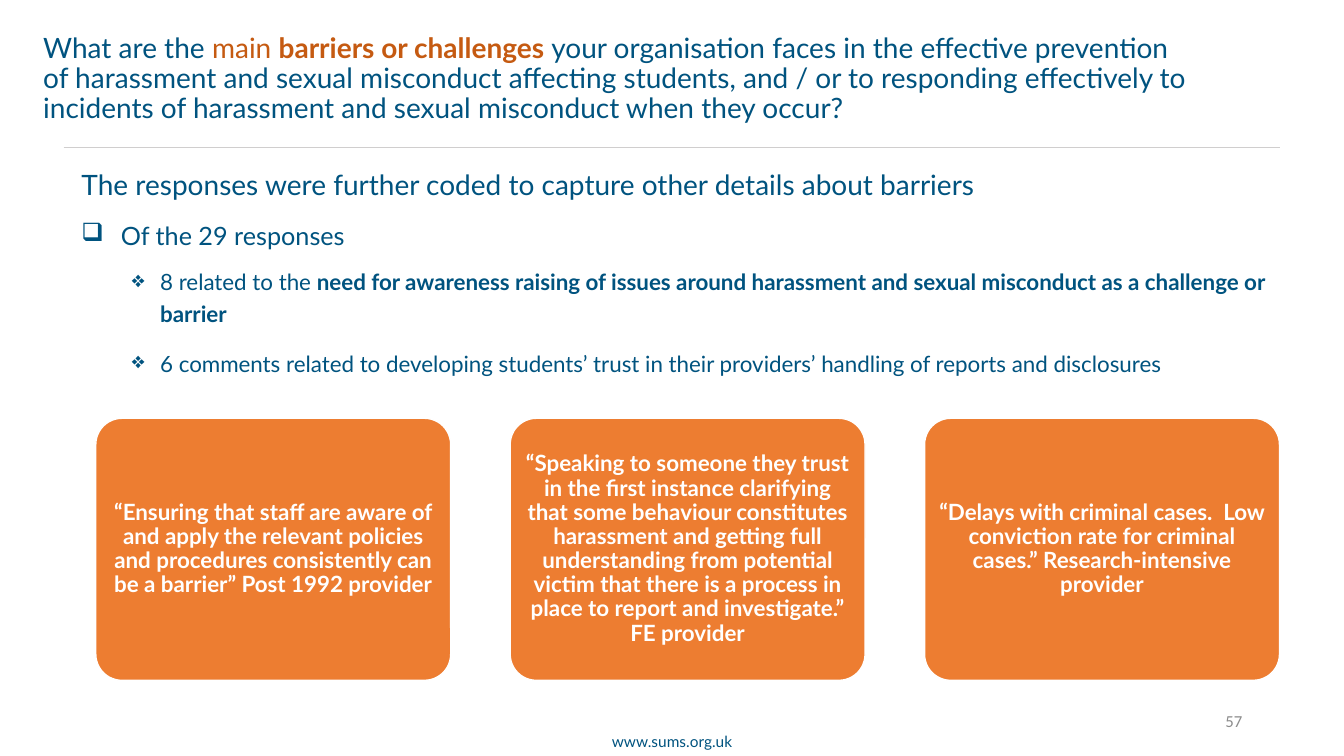
from lxml import etree
from pptx import Presentation
from pptx.dml.color import RGBColor
from pptx.enum import shapes, text
from pptx.oxml import ns
from pptx.util import Inches, Pt

COLORS = {"navy": "00537F", "rust": "C55A11", "orange": "ED7D31",
          "white": "FFFFFF", "rule": "D0CECE", "grey": "8C8C8C"}

# Content: each run is (text, color, bold)
QUESTION = [
    ("What are the ", "navy", False),
    ("main ", "rust", False),
    ("barriers or challenges ", "rust", True),
    ("your organisation faces in the effective prevention of harassment and sexual "
     "misconduct affecting students, and / or to responding effectively to incidents "
     "of harassment and sexual misconduct when they occur?", "navy", False),
]
# Each finding: runs, size, level, bullet, left margin, hanging indent, space after
FINDINGS = [
    ([("The responses were further coded to capture other details about barriers",
       "navy", False)], 20, 0, None, 0, 0, 3),
    ([("Of the 29 responses", "navy", False)], 18, 0, "❑", 0.39, 0.39, 3),
    ([("8 related to the ", "navy", False),
      ("need for awareness raising of issues around harassment and sexual misconduct "
       "as a challenge or barrier", "navy", True)], 16, 1, "❖", 0.78, 0.28, 6),
    ([("6 comments related to developing students’ trust in their providers’ handling "
       "of reports and disclosures", "navy", False)], 16, 1, "❖", 0.78, 0.28, 6),
]
QUOTES = [
    "“Ensuring that staff are aware of and apply the relevant policies and procedures "
    "consistently can be a barrier” Post 1992 provider",
    "“Speaking to someone they trust in the first instance clarifying that some behaviour "
    "constitutes harassment and getting full understanding from potential victim that "
    "there is a process in place to report and investigate.” FE provider",
    "“Delays with criminal cases.  Low conviction rate for criminal cases.” "
    "Research-intensive provider",
]
CARD_LEFT, CARD_TOP, CARD_WIDTH, CARD_HEIGHT, CARD_GAP = 0.95, 4.15, 3.52, 2.6, 0.59


def rgb(name):
    return RGBColor.from_string(COLORS[name])


def set_format(target, values):
    for name, value in values.items():
        setattr(target, name, value)


def write(paragraph, runs, size, font="Lato", **layout):
    set_format(paragraph, layout)
    for words, color, bold in runs:
        run = paragraph.add_run()
        run.text = words
        set_format(run.font, {"name": font, "size": Pt(size), "bold": bold})
        run.font.color.rgb = rgb(color)


def add_box(left, top, width, height):
    frame = slide.shapes.add_textbox(*map(Inches, (left, top, width, height))).text_frame
    frame.word_wrap = True
    return frame


def add_bullet(paragraph, mark, margin, hanging):
    properties = paragraph._p.get_or_add_pPr()
    properties.set("marL", str(Inches(margin)))
    properties.set("indent", str(-Inches(hanging)))
    etree.SubElement(properties, ns.qn("a:buChar")).set("char", mark)


deck = Presentation()
set_format(deck, {"slide_width": Inches(13.33), "slide_height": Inches(7.5)})
slide = deck.slides.add_slide(deck.slide_layouts[6])

# Rule under the question
rule = slide.shapes.add_connector(shapes.MSO_CONNECTOR.STRAIGHT, Inches(0.63), Inches(1.46),
                                  Inches(12.7), Inches(1.46))
rule.line.width = Pt(0.5)
rule.line.color.rgb = rgb("rule")
etree.SubElement(rule._element.spPr, ns.qn("a:effectLst"))

# Question
question = add_box(0.33, 0.29, 11.6, 0.81)
write(question.paragraphs[0], QUESTION, 20, line_spacing=0.9)

# Findings
findings = add_box(0.71, 1.55, 12.22, 2.5)
for index, (runs, size, level, mark, margin, hanging, after) in enumerate(FINDINGS):
    finding = findings.add_paragraph() if index else findings.paragraphs[0]
    if mark:
        add_bullet(finding, mark, margin, hanging)
    write(finding, runs, size, level=level, line_spacing=1.2,
          space_before=Pt(6 if index else 0), space_after=Pt(after))

# Quote cards
for index, quote in enumerate(QUOTES):
    left = CARD_LEFT + index * (CARD_WIDTH + CARD_GAP)
    card = slide.shapes.add_shape(shapes.MSO_SHAPE.ROUNDED_RECTANGLE,
                                  *map(Inches, (left, CARD_TOP, CARD_WIDTH, CARD_HEIGHT)))
    card.adjustments[0] = 0.1
    card.shadow.inherit = False
    card.fill.solid()
    card.fill.fore_color.rgb = rgb("orange")
    card.line.color.rgb = rgb("white")
    card.line.width = Pt(1)
    inset = Inches(0.07)
    set_format(card.text_frame, {
        "word_wrap": True, "vertical_anchor": text.MSO_ANCHOR.MIDDLE,
        "margin_left": inset, "margin_right": inset,
        "margin_top": inset, "margin_bottom": inset})
    write(card.text_frame.paragraphs[0], [(quote, "white", True)], 16,
          alignment=text.PP_ALIGN.CENTER, line_spacing=0.9)

# Footer
website = add_box(5.94, 7.21, 1.45, 0.29)
write(website.paragraphs[0], [("www.sums.org.uk", "navy", False)], 11,
      alignment=text.PP_ALIGN.CENTER)
page_number = add_box(9.42, 6.95, 3, 0.4)
page_number.vertical_anchor = text.MSO_ANCHOR.MIDDLE
write(page_number.paragraphs[0], [("57", "grey", False)], 12, font="Calibri",
      alignment=text.PP_ALIGN.RIGHT)

deck.save("out.pptx")
